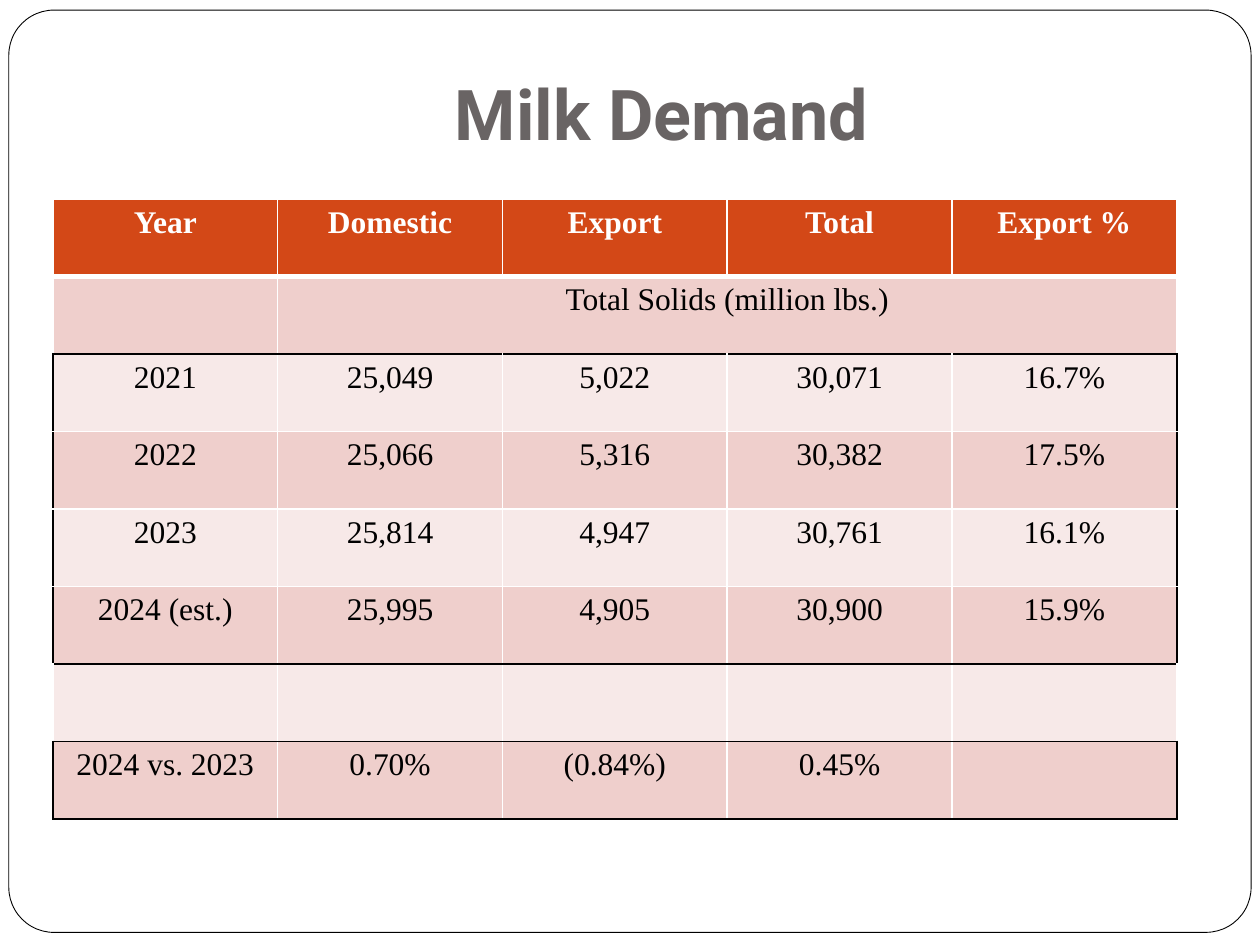
import pptx
import pptx.util
import pptx.dml.color
import pptx.enum.shapes
import pptx.enum.text
import pptx.oxml.ns
import lxml.etree

Inches = pptx.util.Inches
SERIF = "Times New Roman"
BLACK, WHITE = "000000", "FFFFFF"
HEAD, DARK, LIGHT = "D34817", "EFCFCC", "F7E9E8"
ROWS = [
    ["Year", "Domestic", "Export", "Total", "Export %"],
    ["", "Total Solids (million lbs.)", "", "", ""],
    ["2021", "25,049", "5,022", "30,071", "16.7%"],
    ["2022", "25,066", "5,316", "30,382", "17.5%"],
    ["2023", "25,814", "4,947", "30,761", "16.1%"],
    ["2024 (est.)", "25,995", "4,905", "30,900", "15.9%"],
    ["", "", "", "", ""],
    ["2024 vs. 2023", "0.70%", "(0.84%)", "0.45%", ""],
]
BOXED = (2, 3, 4, 5, 7)  # rows with a black outline
RULES = (2, 6, 7, 8)  # black lines across, counted from the top


def color(code):
    return pptx.dml.color.RGBColor.from_string(code)


def write(frame, text, size=18, font=SERIF, ink=BLACK, bold=False):
    para = frame.paragraphs[0]
    para.alignment = pptx.enum.text.PP_ALIGN.CENTER
    run = para.add_run()
    run.text = text
    run.font.size = pptx.util.Pt(size)
    run.font.name = font
    run.font.bold = bold
    run.font.color.rgb = color(ink)


def border(cell, side, ink, width=1):
    props = cell._tc.get_or_add_tcPr()
    qn = pptx.oxml.ns.qn
    line = lxml.etree.SubElement(props, qn("a:ln" + side),
                                 w=str(pptx.util.Pt(width)))
    fill = lxml.etree.SubElement(line, qn("a:solidFill"))
    lxml.etree.SubElement(fill, qn("a:srgbClr"), val=ink)


def add_title(slide):
    title = slide.shapes.title
    title.left, title.top = Inches(1), Inches(0.3)
    title.width, title.height = Inches(8.5), Inches(1.03)
    frame = title.text_frame
    frame.vertical_anchor = pptx.enum.text.MSO_ANCHOR.BOTTOM
    frame.margin_left = frame.margin_right = frame.margin_bottom = Inches(0.1)
    frame.margin_top = Inches(0.05)
    write(frame, "Milk Demand", size=40, font="Roboto", ink="696464", bold=True)


def add_frame(slide):
    frame = slide.shapes.add_shape(
        pptx.enum.shapes.MSO_SHAPE.ROUNDED_RECTANGLE,
        Inches(0.07), Inches(0.08), Inches(9.86), Inches(7.32))
    frame.adjustments[0] = 0.049
    frame.shadow.inherit = False
    frame.fill.solid()
    frame.fill.fore_color.rgb = color(WHITE)
    frame.line.color.rgb = color(BLACK)
    frame.line.width = pptx.util.Pt(0.5)
    # Send behind the title
    slide.shapes.title.element.addprevious(frame.element)


def rule(cell, row, col, last):
    """Draw the four borders of a cell."""
    for side, edge in (("L", col), ("R", col + 1)):
        outer = row in BOXED and edge in (0, last)
        border(cell, side, BLACK if outer else WHITE)
    for side, edge in (("T", row), ("B", row + 1)):
        width = 3 if edge == 1 else 1
        border(cell, side, BLACK if edge in RULES else WHITE, width)


def add_grid(slide):
    count = len(ROWS[0])
    table = slide.shapes.add_table(
        len(ROWS), count, Inches(0.42), Inches(1.58),
        Inches(8.92), Inches(4.92)).table
    table.cell(1, 1).merge(table.cell(1, count - 1))
    for row, texts in enumerate(ROWS):
        shade = HEAD if row == 0 else DARK if row % 2 else LIGHT
        for col, text in enumerate(texts):
            cell = table.cell(row, col)
            rule(cell, row, col, count)
            cell.fill.solid()
            cell.fill.fore_color.rgb = color(shade)
            if text:
                write(cell.text_frame, text, bold=row == 0,
                      ink=BLACK if row else WHITE)


def main():
    deck = pptx.Presentation()
    deck.slide_width, deck.slide_height = Inches(10), Inches(7.5)
    slide = deck.slides.add_slide(deck.slide_layouts[5])
    add_title(slide)
    add_frame(slide)
    add_grid(slide)
    deck.save("out.pptx")


if __name__ == "__main__":
    main()
